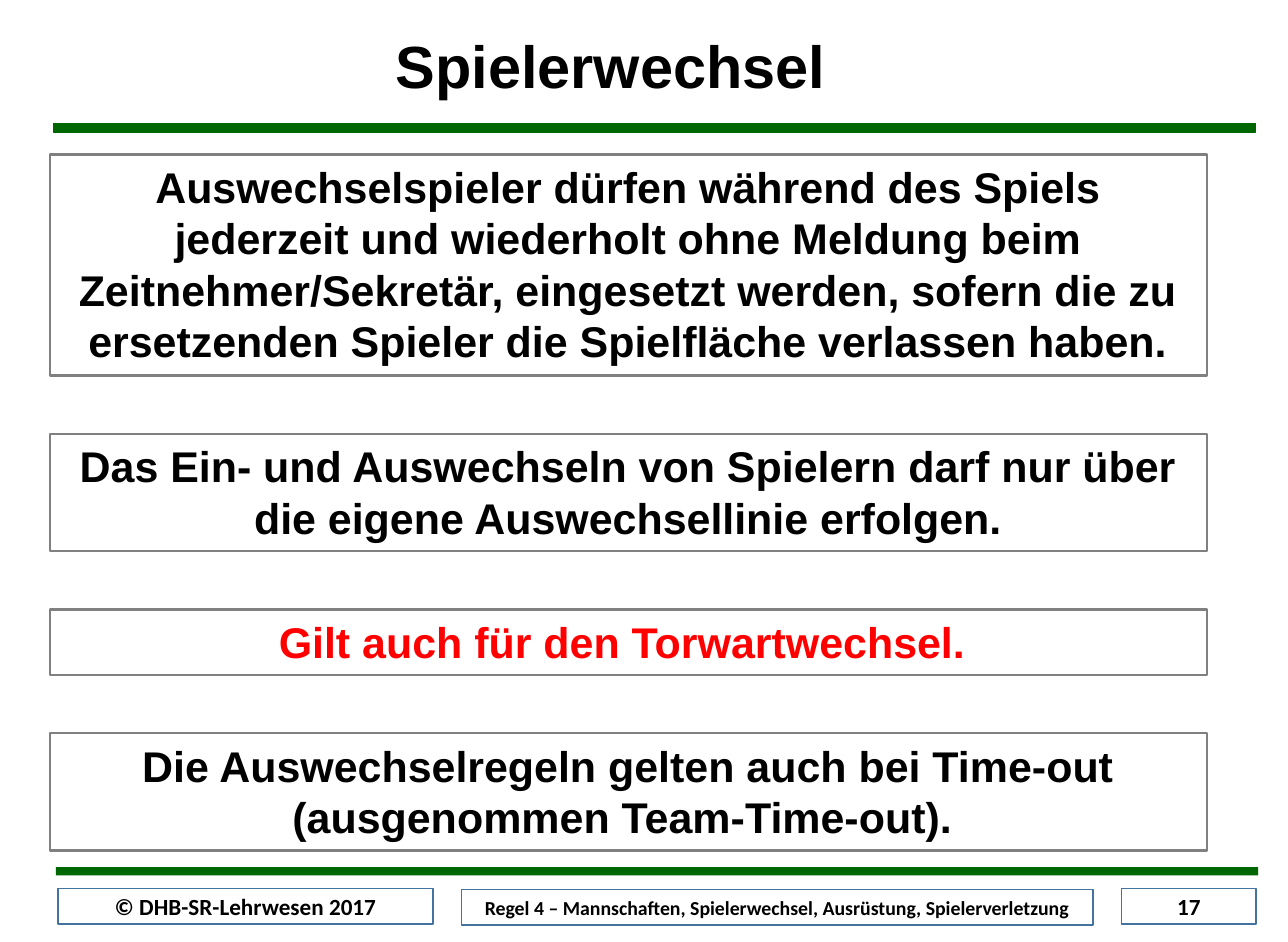
"""Build the slide on player substitution rules with its bars and footer."""
from dataclasses import dataclass

from pptx import Presentation
from pptx.dml.color import RGBColor
from pptx.enum.shapes import MSO_SHAPE
from pptx.enum.text import MSO_ANCHOR, MSO_AUTO_SIZE, PP_ALIGN
from pptx.util import Inches, Pt

RECTANGLE = MSO_SHAPE.RECTANGLE
TOP, MIDDLE = MSO_ANCHOR.TOP, MSO_ANCHOR.MIDDLE
NO_FIT = MSO_AUTO_SIZE.NONE
CENTER = PP_ALIGN.CENTER


@dataclass(frozen=True)
class Theme:
    green: str = "006600"
    white: str = "FFFFFF"
    black: str = "000000"
    red: str = "FF0000"
    rule_border: str = "808080"
    footer_border: str = "43739E"
    heading_font: str = "Arial"
    footer_font: str = "Calibri"
    title_size: int = 36
    rule_size: int = 26
    footer_size: int = 14
    topic_size: int = 12


theme = Theme()
deck = Presentation()
deck.slide_width, deck.slide_height = Inches(10.83), Inches(7.92)
slide = deck.slides.add_slide(deck.slide_layouts[5])
column, row = deck.slide_width / 100, deck.slide_height / 100


def write(holder, text, *, size, font=theme.heading_font, color=theme.black,
          anchor=TOP, spacing=1.0, inset=0.1):
    frame = holder.text_frame
    frame.word_wrap = True
    frame.auto_size = NO_FIT
    frame.vertical_anchor = anchor
    frame.margin_left = frame.margin_right = Inches(inset)
    frame.margin_top = frame.margin_bottom = Inches(0.05)
    paragraph = frame.paragraphs[0]
    paragraph.alignment = CENTER
    paragraph.line_spacing = spacing
    run = paragraph.add_run()
    run.text = text
    run.font.name, run.font.size, run.font.bold = font, Pt(size), True
    run.font.color.rgb = RGBColor.from_string(color)


def add_panel(left, top, width, height, fill, border=None, weight=1):
    panel = slide.shapes.add_shape(RECTANGLE, int(left * column), int(top * row),
                                   int(width * column), int(height * row))
    panel.shadow.inherit = False
    panel.fill.solid()
    panel.fill.fore_color.rgb = RGBColor.from_string(fill)
    if border:
        panel.line.color.rgb = RGBColor.from_string(border)
        panel.line.width = Pt(weight)
    else:
        panel.line.fill.background()
    return panel


title = slide.shapes.title
title.left, title.top = int(27.42 * column), int(3.28 * row)
title.width, title.height = int(39.98 * column), int(7.32 * row)
write(title, "Spielerwechsel", size=theme.title_size, spacing=0.9)

add_panel(4.16, 13.13, 93.35, 0.88, theme.green, theme.green, 0.75)
add_panel(4.34, 92.05, 93.35, 0.88, theme.green)

footer_left, footer_gap = 4.52, 2.22
footer = [
    ("© DHB-SR-Lehrwesen 2017", 29.09, 94.32, theme.footer_size),
    ("Regel 4 – Mannschaften, Spielerwechsel, Ausrüstung, Spielerverletzung",
     49.03, 94.44, theme.topic_size),
    ("17", 10.43, 94.32, theme.footer_size),
]
for label, width, top, size in footer:
    cell = add_panel(footer_left, top, width, 3.79, theme.white, theme.footer_border)
    write(cell, label, size=size, font=theme.footer_font, anchor=MIDDLE)
    footer_left += width + footer_gap

rule_top, rule_gap, line_height, rule_padding = 16.41, 6.19, 5.51, 1.43
rules = [
    ("Auswechselspieler dürfen während des Spiels jederzeit und wiederholt ohne "
     "Meldung beim Zeitnehmer/Sekretär, eingesetzt werden, sofern die zu "
     "ersetzenden Spieler die Spielfläche verlassen haben.", 4, theme.black),
    ("Das Ein- und Auswechseln von Spielern darf nur über die eigene "
     "Auswechsellinie erfolgen.", 2, theme.black),
    ("Gilt auch für den Torwartwechsel. ", 1, theme.red),
    ("Die Auswechselregeln gelten auch bei Time-out "
     "(ausgenommen Team-Time-out). ", 2, theme.black),
]
for rule, lines, color in rules:
    height = lines * line_height + rule_padding
    rule_box = add_panel(3.88, rule_top, 89.84, height, theme.white,
                         theme.rule_border, 1.5)
    write(rule_box, rule, size=theme.rule_size, color=color, inset=0.11)
    rule_top += height + rule_gap

deck.save("out.pptx")
